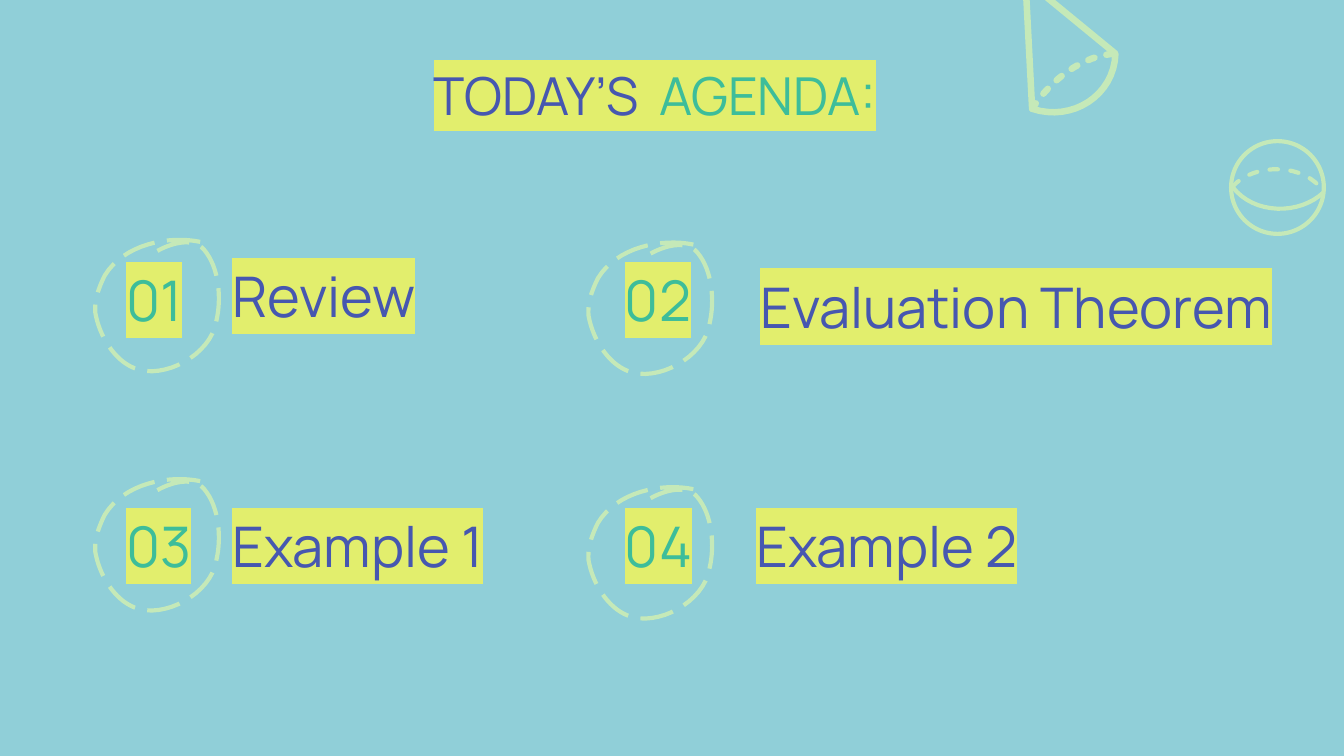
from lxml import etree
from pptx import Presentation
from pptx.dml.color import RGBColor
from pptx.enum.dml import MSO_LINE_DASH_STYLE as Dash
from pptx.enum.shapes import MSO_SHAPE as Shape
from pptx.enum.text import MSO_ANCHOR as Anchor
from pptx.oxml.ns import qn
from pptx.util import Inches, Pt

BACKGROUND = RGBColor(0x90, 0xCF, 0xD8)
OUTLINE = RGBColor(0xC5, 0xE9, 0xB8)
INDIGO = RGBColor(0x46, 0x57, 0xB0)
GREEN = RGBColor(0x3D, 0xBD, 0x9A)
HIGHLIGHT = RGBColor(0xE2, 0xEE, 0x6D)
FONT = "Manrope"

# Each curve is a start point followed by cubic segments (two controls, end).
RING = [(0.78, 0.02),
        (0.54, -0.03), (0.21, 0.04), (0.07, 0.27),
        (0.03, 0.35), (-0.01, 0.45), (0, 0.55),
        (0.03, 0.72), (0.14, 0.9), (0.29, 0.96),
        (0.51, 1.05), (0.86, 0.86), (0.9, 0.61),
        (0.94, 0.44), (0.92, 0.21), (0.81, 0.08),
        (0.73, -0.02), (0.55, 0.03), (0.44, 0.1)]
SPHERE_FRONT = [(0.02, 0.36), (0.18, 0.57), (0.52, 0.57), (0.7, 0.4)]
SPHERE_BACK = [(0.02, 0.36), (0.18, 0.18), (0.56, 0.18), (0.7, 0.4)]
CONE_BASE = [(0.08, 1), (0.38, 1.1), (0.69, 0.9), (0.7, 0.59)]
CONE_BACK = [(0.08, 1), (0.22, 0.78), (0.46, 0.6), (0.7, 0.59)]


def sample(curve, steps=16):
    """Return points along a chain of cubic segments."""
    points = [curve[0]]
    for i in range(0, len(curve) - 1, 3):
        a, b, c, d = curve[i:i + 4]
        for n in range(1, steps + 1):
            t = n / steps
            u = 1 - t
            points.append(tuple(
                u**3 * a[k] + 3 * u * u * t * b[k] + 3 * u * t * t * c[k] + t**3 * d[k]
                for k in (0, 1)))
    return points


def style_outline(sp, width):
    sp.shadow.inherit = False
    sp.fill.background()
    sp.line.color.rgb = OUTLINE
    sp.line.width = Pt(width)


def add_path(slide, x, y, points, width, closed=False):
    pts = [(Inches(x + px), Inches(y + py)) for px, py in points]
    builder = slide.shapes.build_freeform(*pts[0])
    builder.add_line_segments(pts[1:], close=closed)
    sp = builder.convert_to_shape()
    style_outline(sp, width)
    return sp


def set_round_dash(sp, dash, gap):
    """Set a round-capped dash; lengths are percentages of the line width."""
    ln = sp.line._get_or_add_ln()
    ln.set("cap", "rnd")
    cust = etree.Element(qn("a:custDash"))
    etree.SubElement(cust, qn("a:ds"), d=str(dash * 1000), sp=str(gap * 1000))
    ln.find(qn("a:solidFill")).addnext(cust)


def add_sphere(slide, x, y):
    ball = slide.shapes.add_shape(Shape.OVAL, Inches(x + 0.01), Inches(y + 0.02),
                                  Inches(0.69), Inches(0.69))
    style_outline(ball, 2.25)
    add_path(slide, x, y, sample(SPHERE_FRONT), 2.25)
    set_round_dash(add_path(slide, x, y, sample(SPHERE_BACK), 2.25), 300, 200)


def add_cone(slide, x, y):
    outline = [(0.03, 0.04)] + sample(CONE_BASE)
    add_path(slide, x, y, outline, 3.5, closed=True)
    set_round_dash(add_path(slide, x, y, sample(CONE_BACK), 3.5), 200, 90)


def add_text(slide, x, y, w, h, parts, size, inset=0.1):
    """Add one highlighted line; parts are (text, colour)."""
    box = slide.shapes.add_textbox(Inches(x), Inches(y), Inches(w), Inches(h))
    tf = box.text_frame
    tf.word_wrap = True
    tf.vertical_anchor = Anchor.MIDDLE
    tf.margin_left = tf.margin_right = Inches(inset)
    tf.margin_top = tf.margin_bottom = Inches(inset)
    for text, color in parts:
        r = tf.paragraphs[0].add_run()
        r.text = text
        r.font.size = Pt(size)
        r.font.name = FONT
        r.font.color.rgb = color
        mark = etree.Element(qn("a:highlight"))
        etree.SubElement(mark, qn("a:srgbClr"), val=str(HIGHLIGHT))
        r.font._element.find(qn("a:solidFill")).addnext(mark)


def add_item(slide, x, y, number, label, label_box, ring_offset):
    """Place a ringed number and its label; offsets are from (x, y)."""
    add_text(slide, x, y, 1.13, 1.09, [(number, GREEN)], 30, inset=0)
    dx, dy, width = label_box
    add_text(slide, x + dx, y + dy, width, 0.47, [(label, INDIGO)], 30)
    dx, dy = ring_offset
    ring = add_path(slide, x + dx, y + dy, sample(RING), 2.25)
    ring.line.dash_style = Dash.LONG_DASH


def add_agenda(slide):
    left, right = 0.94, 4.65
    top, bottom = 1.68, 3.51
    add_item(slide, left, top, "01", "Review", (0.69, 0.28, 2.87), (-0.23, 0.1))
    add_item(slide, right, top, "02", "Evaluation Theorem", (0.91, 0.36, 4.19), (-0.27, 0.12))
    add_item(slide, left, bottom, "03", "Example 1", (0.69, 0.31, 2.62), (-0.23, 0.05))
    add_item(slide, right, bottom, "04", "Example 2", (0.88, 0.31, 2.3), (-0.27, 0.11))


def main():
    prs = Presentation()
    prs.slide_width = Inches(10)
    prs.slide_height = prs.slide_width * 9 // 16
    slide = prs.slides.add_slide(prs.slide_layouts[6])
    slide.background.fill.solid()
    slide.background.fill.fore_color.rgb = BACKGROUND
    add_sphere(slide, 9.15, 1.03)
    add_cone(slide, 7.6, -0.19)
    heading = [("TODAY’S  ", INDIGO), ("AGENDA:", GREEN)]
    add_text(slide, 3.13, 0.37, 3.74, 0.67, heading, 28)
    add_agenda(slide)
    prs.save("out.pptx")


if __name__ == "__main__":
    main()
